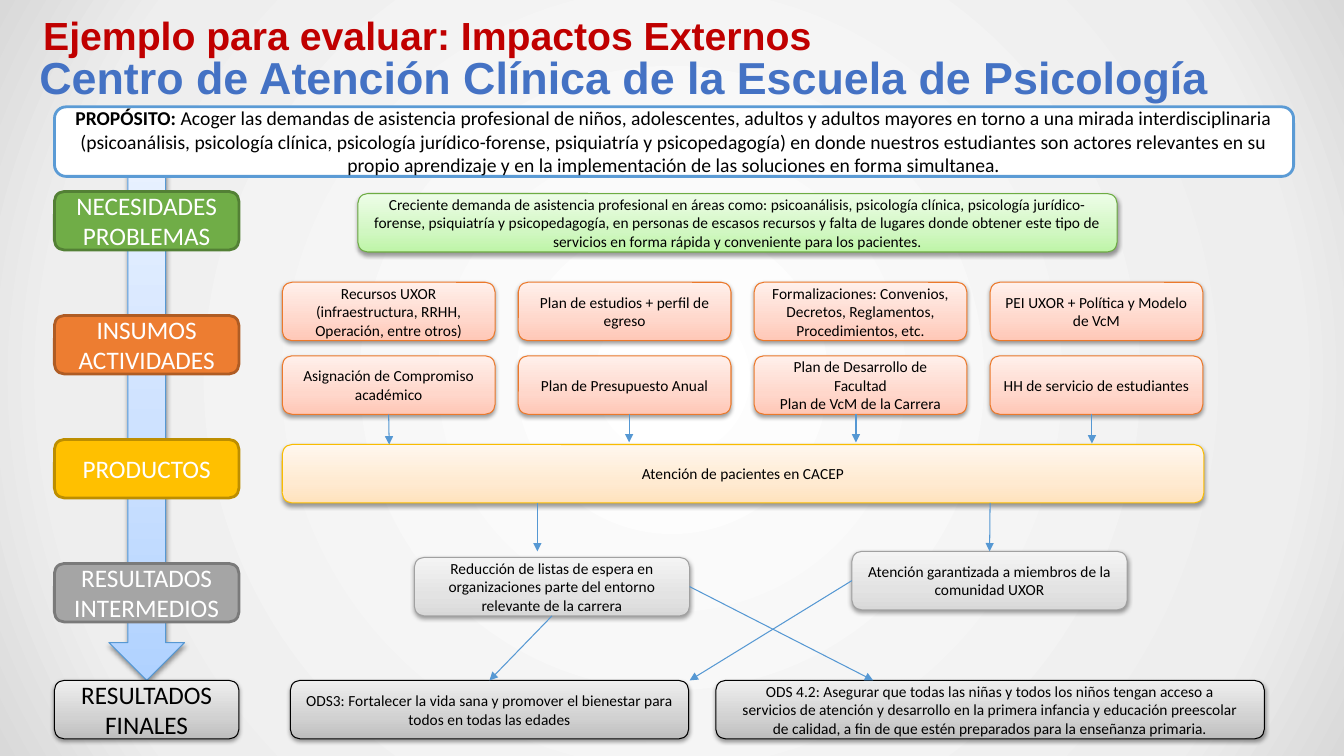
from pptx import Presentation, util as u
from pptx.dml.color import RGBColor
from pptx.enum import shapes, text
from pptx.oxml import parse_xml
from pptx.oxml.ns import nsdecls, qn

WHITE, BLACK = RGBColor(255, 255, 255), RGBColor(0, 0, 0)
RED, BLUE = RGBColor(0xC0, 0, 0), RGBColor(0x44, 0x72, 0xC4)
SKY, EDGE = RGBColor(0x5B, 0x9B, 0xD5), RGBColor(0x56, 0x98, 0xD3)
GREEN, MOSS = RGBColor(0x70, 0xAD, 0x47), RGBColor(0x53, 0x80, 0x35)
LEAF, RUST = RGBColor(0x6D, 0xAC, 0x43), RGBColor(0xAF, 0x5C, 0x24)
ORANGE, CORAL = RGBColor(0xED, 0x7D, 0x31), RGBColor(0xEC, 0x79, 0x2B)
GOLD, BRONZE = RGBColor(0xFF, 0xC0, 0), RGBColor(0xBD, 0x8E, 0)
AMBER = RGBColor(0xF9, 0xBC, 0)
GREY, STONE = RGBColor(0xA5, 0xA5, 0xA5), RGBColor(0x7A, 0x7A, 0x7A)
ASH = RGBColor(0xA1, 0xA1, 0xA1)
PALE = [(0, WHITE), (81, RGBColor(0xEE, 0xEE, 0xEE)), (100, RGBColor(0xD9, 0xD9, 0xD9))]
ICE, MINT, ROSE, CREAM, MIST, STEEL = [
    list(zip((0, 35, 100), map(RGBColor.from_string, trio.split()))) for trio in (
        "B0D2FF C7DEFF EAF2FF", "BEF5A7 D1F7C2 EDFDE7", "FFC7B6 FFD7CB FFF0EB",
        "FFE2BD FFEAD1 FFF7EE", "D8D8D8 E3E3E3 F4F4F4", "BDBDBD D1D1D1 EEEEEE")]
RISE = '<a:lin ang="16200000" scaled="0"/>'
ROUND = ('<a:path path="circle"><a:fillToRect l="50000" t="50000" '
         'r="50000" b="50000"/></a:path>')
SHADE = (f'<a:outerShdw {nsdecls("a")} blurRad="40000" dist="20000" dir="5400000" '
         'rotWithShape="0"><a:srgbClr val="000000"><a:alpha val="38000"/>'
         '</a:srgbClr></a:outerShdw>')


def blend(node, stops, way):
    """Swap the solid fill in node for a gradient."""
    marks = "".join(f'<a:gs pos="{at * 1000}"><a:srgbClr val="{tint}"/></a:gs>'
                    for at, tint in stops)
    node.replace(node.find(qn("a:solidFill")), parse_xml(
        f'<a:gradFill {nsdecls("a")} rotWithShape="1"><a:gsLst>{marks}</a:gsLst>{way}</a:gradFill>'))


def write(para, words, tint, **form):
    run = para.add_run()
    run.text = words
    run.font.color.rgb = tint
    for key, value in form.items():
        setattr(run.font, key, value)


deck = Presentation()
deck.slide_width, deck.slide_height = u.Inches(13.33), u.Inches(7.5)
slide = deck.slides.add_slide(deck.slide_layouts[5])
slide.background.fill.solid()
blend(slide.element.find(".//" + qn("p:bgPr")), PALE, ROUND)

# Headings
title = slide.shapes.title
place = dict(left=0.39, top=0.51, width=12, height=0.49)
for key, value in place.items():
    setattr(title, key, u.Inches(value))
frame = title.text_frame
form = dict(margin_left=0, margin_right=0, margin_top=u.Inches(0.07),
            margin_bottom=u.Inches(0.07), auto_size=text.MSO_AUTO_SIZE.NONE,
            vertical_anchor=text.MSO_ANCHOR.MIDDLE)
for key, value in form.items():
    setattr(frame, key, value)
frame.paragraphs[0].alignment = text.PP_ALIGN.LEFT
write(frame.paragraphs[0], "Centro de Atención Clínica de la Escuela de Psicología",
      BLUE, name="Arial", size=u.Pt(32), bold=True)
label = slide.shapes.add_textbox(*map(u.Inches, (0.33, 0.06, 7.91, 0.57)))
label.text_frame.word_wrap = False
write(label.text_frame.paragraphs[0], "Ejemplo para evaluar: Impactos Externos",
      RED, name="Arial", size=u.Pt(28), bold=True)

# Boxes: left, top, width, height, fill, edge, text colour, size, words
SIDE, WIDE, HIGH, STEP = 0.54, 1.83, 0.58, 1.23
LEFT, CELL, PITCH, LAST = 2.8, 2.11, 2.34, 6.75
stages = [
    ("NECESIDADES PROBLEMAS", GREEN, MOSS),
    ("INSUMOS ACTIVIDADES", ORANGE, RUST),
    ("PRODUCTOS", GOLD, BRONZE),
    ("RESULTADOS INTERMEDIOS", GREY, STONE),
]
inputs = [
    ["Recursos UXOR (infraestructura, RRHH, Operación, entre otros)",
     "Plan de estudios + perfil de egreso",
     "Formalizaciones: Convenios, Decretos, Reglamentos, Procedimientos, etc.",
     "PEI UXOR + Política y Modelo de VcM"],
    ["Asignación de Compromiso académico",
     "Plan de Presupuesto Anual",
     "Plan de Desarrollo de Facultad\nPlan de VcM de la Carrera",
     "HH de servicio de estudiantes"],
]
boxes = [(1.08, 1.4, 0.75, 5.35, ICE, EDGE, BLACK, 11, "")]
boxes += [(SIDE, 1.9 + STEP * row, WIDE, HIGH, fill, edge, WHITE, 18, words)
          for row, (words, fill, edge) in enumerate(stages)]
boxes += [
    (SIDE, LAST, WIDE, HIGH, STEEL, BLACK, BLACK, 18, "RESULTADOS FINALES"),
    (SIDE, 1.06, 12.29, 0.69, WHITE, SKY, BLACK, 14, "PROPÓSITO:"),
    (3.55, 1.92, 7.53, HIGH, MINT, LEAF, BLACK, 11,
     "Creciente demanda de asistencia profesional en áreas como: psicoanálisis, "
     "psicología clínica, psicología jurídico-forense, psiquiatría y psicopedagogía, "
     "en personas de escasos recursos y falta de lugares donde obtener este tipo de "
     "servicios en forma rápida y conveniente para los pacientes."),
]
boxes += [(LEFT + PITCH * col, 2.8 + 0.73 * row, CELL, HIGH, ROSE, CORAL, BLACK, 11, words)
          for row, line in enumerate(inputs) for col, words in enumerate(line)]
boxes += [
    (LEFT, 4.41, 9.14, HIGH, CREAM, AMBER, BLACK, 11, "Atención de pacientes en CACEP"),
    (2.88, LAST, 3.95, HIGH, STEEL, BLACK, BLACK, 11,
     "ODS3: Fortalecer la vida sana y promover el bienestar para todos en todas las edades"),
    (8.45, 5.47, 2.73, HIGH, MIST, ASH, BLACK, 11,
     "Atención garantizada a miembros de la comunidad UXOR"),
    (4.11, 5.53, 2.73, HIGH, MIST, ASH, BLACK, 11,
     "Reducción de listas de espera en organizaciones parte del entorno "
     "relevante de la carrera"),
    (7.1, LAST, 5.44, HIGH, STEEL, BLACK, BLACK, 11,
     "ODS 4.2: Asegurar que todas las niñas y todos los niños tengan acceso a\n"
     "servicios de atención y desarrollo en la primera infancia y educación preescolar\n"
     "de calidad, a fin de que estén preparados para la enseñanza primaria."),
]
made = {}
for *spot, fill, edge, ink, size, words in boxes:
    kind = shapes.MSO_SHAPE.ROUNDED_RECTANGLE if words else shapes.MSO_SHAPE.DOWN_ARROW
    box = slide.shapes.add_shape(kind, *map(u.Inches, spot))
    box.shadow.inherit = False
    box.fill.solid()
    box.line.color.rgb = edge
    if isinstance(fill, list):
        props = box.element.spPr
        blend(props, fill, RISE)
        props.find(qn("a:effectLst")).append(parse_xml(SHADE))
        box.line.width = u.Pt(0.75)
    else:
        box.fill.fore_color.rgb = fill
        box.line.width = u.Pt(2)
    if not words:
        continue
    frame = box.text_frame
    frame.word_wrap = True
    frame.vertical_anchor = text.MSO_ANCHOR.MIDDLE
    for row, line in enumerate(words.split("\n")):
        para = frame.add_paragraph() if row else frame.paragraphs[0]
        para.alignment = text.PP_ALIGN.CENTER
        write(para, line, ink, name="Calibri", size=u.Pt(size), bold=size == 14)
    made[" ".join(words.split()[:2])] = box

write(made["PROPÓSITO:"].text_frame.paragraphs[0],
      " Acoger las demandas de asistencia profesional de niños, adolescentes, adultos y "
      "adultos mayores en torno a una mirada interdisciplinaria (psicoanálisis, psicología "
      "clínica, psicología jurídico-forense, psiquiatría y psicopedagogía) en donde nuestros "
      "estudiantes son actores relevantes en su propio aprendizaje y en la implementación de "
      "las soluciones en forma simultanea.",
      BLACK, name="Calibri", size=u.Pt(14), bold=False)

# Arrows: from, to, joint at the start, joint at the end
queue, access = made["Reducción de"], made["Atención garantizada"]
arrows = [
    ((3.86, 4.11), (3.86, 4.41), (made["Asignación de"], 2), None),
    ((6.24, 4.11), (6.24, 4.39), None, None),
    ((8.49, 4.11), (8.49, 4.39), None, None),
    ((10.83, 4.11), (10.83, 4.4), None, None),
    ((5.33, 4.99), (5.33, 5.47), None, None),
    ((9.82, 4.99), (9.82, 5.47), None, (access, 0)),
    ((5.47, 6.11), (4.86, LAST), (queue, 2), (made["ODS3: Fortalecer"], 0)),
    ((8.45, 5.76), (6.84, LAST), (access, 1), None),
    ((6.84, 5.82), (8.66, LAST), (queue, 3), None),
]
for start, stop, tie, bond in arrows:
    arrow = slide.shapes.add_connector(
        shapes.MSO_CONNECTOR.STRAIGHT, *map(u.Inches, start + stop))
    if tie:
        arrow.begin_connect(*tie)
    if bond:
        arrow.end_connect(*bond)
    arrow.line.color.rgb = EDGE
    arrow.line.width = u.Pt(0.75)
    props = arrow.element.spPr
    props.find(qn("a:ln")).append(parse_xml(f'<a:tailEnd {nsdecls("a")} type="triangle"/>'))
    props.append(parse_xml(f'<a:effectLst {nsdecls("a")}/>'))

deck.save("out.pptx")
